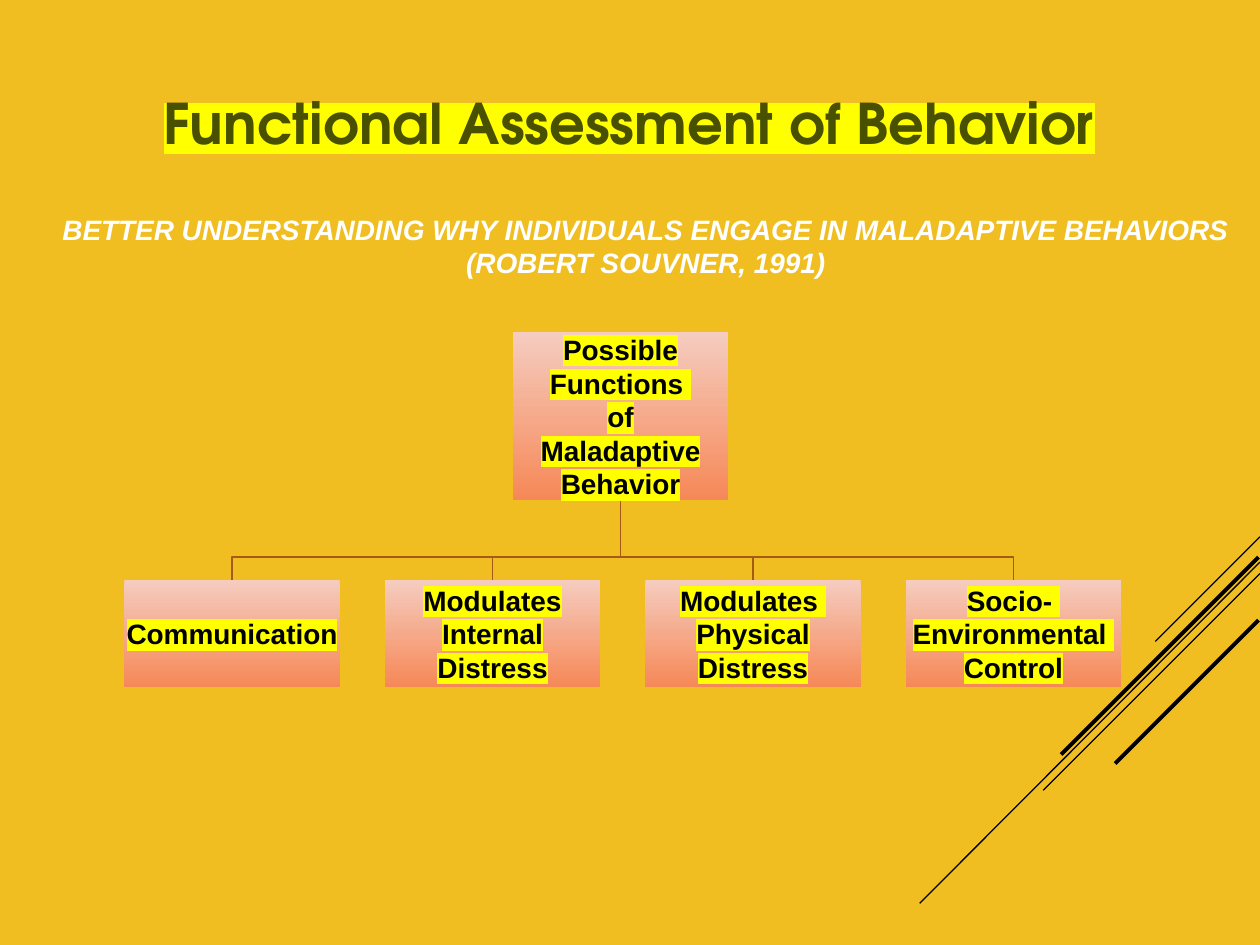
from dataclasses import dataclass

from lxml import etree
from pptx import Presentation
from pptx.dml.color import RGBColor
from pptx.enum.shapes import MSO_CONNECTOR, MSO_SHAPE
from pptx.enum.text import MSO_ANCHOR, MSO_AUTO_SIZE, PP_ALIGN
from pptx.oxml.ns import qn
from pptx.util import Cm, Pt

RECT = MSO_SHAPE.RECTANGLE
LINE = MSO_CONNECTOR.STRAIGHT
MIDDLE = MSO_ANCHOR.MIDDLE
TOP = MSO_ANCHOR.TOP
CENTER = PP_ALIGN.CENTER
NO_FIT = MSO_AUTO_SIZE.NONE


@dataclass(frozen=True)
class Theme:
    back: str = "F0BE21"
    ink: str = "000000"
    light: str = "FFFFFF"
    olive: str = "495100"
    mark: str = "FFFF00"
    link: str = "A75918"
    pale: str = "F5CCBF"
    deep: str = "F68857"
    head_font: str = "TeX Gyre Adventor"
    body_font: str = "Arial"
    head_size: float = 32
    body_size: float = 16
    thin: float = 0.75
    thick: float = 2.25
    link_width: float = 1


@dataclass(frozen=True)
class Box:
    left: float
    top: float
    width: float
    height: float
    lines: tuple[str, ...]

    @property
    def mid(self) -> float:
        return self.left + self.width / 2


@dataclass(frozen=True)
class Stripe:
    x1: float
    y1: float
    x2: float
    y2: float
    width: float


THEME = Theme()
WIDTH, HEIGHT = 25.4, 19.05
BOX_WIDTH, PITCH = 4.34, 5.25
LEAF_LEFT, LEAF_TOP, LEAF_HEIGHT = 2.51, 11.69, 2.16
BUS = 11.23

ROOT = Box(10.34, 6.7, BOX_WIDTH, 3.39,
           ("Possible Functions ", "of", "Maladaptive", "Behavior"))
LEAF_LINES = (
    ("Communication",),
    ("Modulates", "Internal", "Distress"),
    ("Modulates ", "Physical", "Distress"),
    ("Socio- ", "Environmental ", "Control"),
)
LEAVES = [Box(LEAF_LEFT + i * PITCH, LEAF_TOP, BOX_WIDTH, LEAF_HEIGHT, lines)
          for i, lines in enumerate(LEAF_LINES)]
STRIPES = (
    Stripe(25.4, 10.82, 23.29, 12.93, THEME.thin),
    Stripe(25.4, 11.33, 18.54, 18.21, THEME.thin),
    Stripe(25.4, 11.56, 21.03, 15.93, THEME.thin),
    Stripe(25.37, 11.23, 21.39, 15.21, THEME.thick),
    Stripe(25.37, 12.5, 22.48, 15.39, THEME.thick),
)


def color(code: str) -> RGBColor:
    return RGBColor.from_string(code)


def write(shape, lines: tuple[str, ...], *, font: str = THEME.body_font,
          size: float = THEME.body_size, tint: str = THEME.ink,
          mark: str = "", slant: bool = False, inset: float = 0.25,
          anchor=MIDDLE) -> None:
    frame = shape.text_frame
    frame.word_wrap = True
    frame.auto_size = NO_FIT
    frame.vertical_anchor = anchor
    frame.margin_left = frame.margin_right = Cm(inset)
    frame.margin_top = frame.margin_bottom = Cm(inset / 2)
    for i, line in enumerate(lines):
        para = frame.add_paragraph() if i else frame.paragraphs[0]
        para.text = line
        para.alignment = CENTER
        for run in para.runs:
            run.font.size = Pt(size)
            run.font.bold = True
            run.font.italic = slant
            run.font.color.rgb = color(tint)
            if mark:
                props = run.font._element
                light = etree.SubElement(props, qn("a:highlight"))
                etree.SubElement(light, qn("a:srgbClr"), val=mark)
            run.font.name = font


def draw_box(slide, box: Box) -> None:
    shape = slide.shapes.add_shape(
        RECT, Cm(box.left), Cm(box.top), Cm(box.width), Cm(box.height))
    shape.shadow.inherit = False
    shape.line.fill.background()
    shape.fill.gradient()
    shape.fill.gradient_angle = 270
    for stop, tint in zip(shape.fill.gradient_stops, (THEME.pale, THEME.deep)):
        stop.color.rgb = color(tint)
    write(shape, box.lines, mark=THEME.mark, inset=0.03)


def draw_link(slide, root: Box, leaf: Box) -> None:
    points = [(Cm(root.mid), Cm(BUS)), (Cm(leaf.mid), Cm(BUS)),
              (Cm(leaf.mid), Cm(leaf.top))]
    path = slide.shapes.build_freeform(Cm(root.mid), Cm(root.top + root.height))
    path.add_line_segments(points, close=False)
    shape = path.convert_to_shape()
    shape.shadow.inherit = False
    shape.fill.background()
    shape.line.color.rgb = color(THEME.link)
    shape.line.width = Pt(THEME.link_width)


def draw_stripe(slide, stripe: Stripe) -> None:
    line = slide.shapes.add_connector(
        LINE, Cm(stripe.x1), Cm(stripe.y1), Cm(stripe.x2), Cm(stripe.y2))
    line.line.color.rgb = color(THEME.ink)
    line.line.width = Pt(stripe.width)
    etree.SubElement(line._element.spPr, qn("a:effectLst"))


def main() -> None:
    deck = Presentation()
    deck.slide_width, deck.slide_height = Cm(WIDTH), Cm(HEIGHT)
    slide = deck.slides.add_slide(deck.slide_layouts[5])
    slide.background.fill.solid()
    slide.background.fill.fore_color.rgb = color(THEME.back)

    for stripe in STRIPES:
        draw_stripe(slide, stripe)

    title = slide.shapes.title
    title.left, title.top = Cm(0.64), Cm(3.66)
    title.width, title.height = Cm(24.76), Cm(2.59)
    write(title, ("BETTER UNDERSTANDING WHY INDIVIDUALS ENGAGE IN MALADAPTIVE "
                  "BEHAVIORS\v(ROBERT SOUVNER, 1991)",),
          tint=THEME.light, slant=True)

    for leaf in reversed(LEAVES):
        draw_link(slide, ROOT, leaf)
    for box in (ROOT, *LEAVES):
        draw_box(slide, box)

    head = slide.shapes.add_textbox(Cm(2.74), Cm(1.65), Cm(19.89), Cm(1.63))
    write(head, ("Functional Assessment of Behavior",), font=THEME.head_font,
          size=THEME.head_size, tint=THEME.olive, mark=THEME.mark, anchor=TOP)

    deck.save("out.pptx")


if __name__ == "__main__":
    main()
